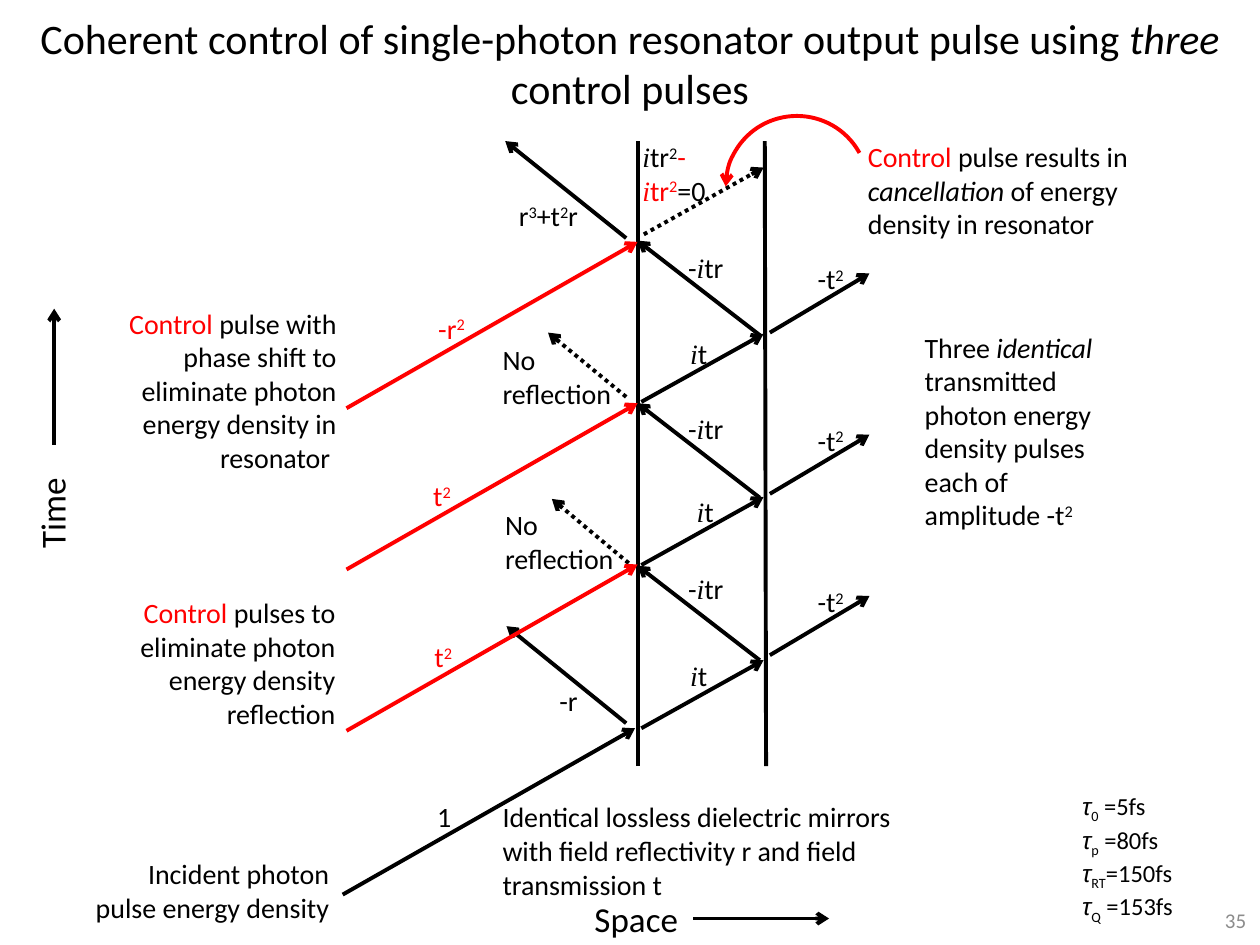
from lxml.etree import SubElement
from pptx import Presentation
from pptx.dml.color import RGBColor
from pptx.enum.dml import MSO_LINE
from pptx.enum.shapes import MSO_CONNECTOR, MSO_SHAPE
from pptx.enum.text import MSO_ANCHOR, MSO_AUTO_SIZE, PP_ALIGN
from pptx.oxml.ns import qn
from pptx.util import Inches, Pt

BLACK, RED, GRAY = "000000", "FF0000", "8C8C8C"
ALIGN = {"l": PP_ALIGN.LEFT, "c": PP_ALIGN.CENTER, "r": PP_ALIGN.RIGHT}

# Run styles: R red, I italic, M italic Times, G italic Arial, ^ superscript, _ subscript
IT = [("i", "M"), ("t", "")]
MINUS_ITR = [("-", ""), ("i", "M"), ("tr", "")]
MINUS_T2 = [("-t", ""), ("2", "^")]
RED_T2 = [("t", "R"), ("2", "R^")]
RED_MINUS_R2 = [("-r", "R"), ("2", "R^")]

TRIPS = 3
# start x, start y, end x, end y, colour, rise per round trip
TRIP_RAYS = [
    (5.09, 5.78, 6.06, 5.24, BLACK, 1.295),
    (6.03, 5.24, 5.06, 4.49, BLACK, 1.29),
    (6.11, 5.2, 6.9, 4.73, BLACK, 1.28),
    (2.75, 5.8, 5.06, 4.48, RED, 1.28),
]
# left, top, width, runs, wrap, rise per round trip
TRIP_LABELS = [
    (5.23, 4.49, 0.61, MINUS_ITR, True, 1.275),
    (6.39, 4.59, 0.42, MINUS_T2, False, 1.28),
]
SINGLE_RAYS = [
    (2.72, 7.1, 5.04, 5.78, False),
    (4.97, 5.74, 4.02, 4.97, False),
    (4.99, 4.47, 4.38, 3.96, True),
    (4.97, 3.15, 4.35, 2.64, True),
    (4.97, 1.89, 4.01, 1.12, False),
    (5.11, 1.86, 6.06, 1.33, True),
]
MIRRORS = [(5.06, 6.08, 5.06, 1.12), (6.08, 6.08, 6.07, 1.12)]
AXES = [(5.5, 7.29, 6.58, 7.29), (0.43, 3.53, 0.43, 2.45)]

# left, top, width, height, alignment, runs
NOTES = [
    (0.62, 6.75, 2.09, 0.64, "r", [("Incident photon pulse energy density", "")]),
    (7.24, 2.57, 1.81, 1.72, "l", [
        ("Three ", ""), ("identical", "I"),
        (" transmitted photon energy density pulses each of amplitude -t", ""), ("2", "^")]),
    (3.89, 6.3, 3.42, 0.91, "l", [
        ("Identical lossless dielectric mirrors with field reflectivity r and field transmission t", "")]),
    (6.79, 1.06, 2.86, 0.91, "l", [
        ("Control ", "R"), ("pulse results in ", ""), ("cancellation", "I"),
        (" of energy density in resonator", "")]),
    (0.51, 2.38, 2.26, 1.45, "r", [
        ("Control", "R"),
        (" pulse with phase shift to eliminate photon energy density in resonator ", "")]),
    (0.42, 4.68, 2.34, 1.17, "r", [
        ("Control", "R"), (" pulses to eliminate photon energy density reflection", "")]),
    (3.91, 3.98, 1.19, 0.64, "l", [("No reflection", "")]),
    (3.89, 2.67, 1.19, 0.64, "l", [("No reflection", "")]),
    (5, 1.06, 0.77, 0.64, "l", [
        ("i", "M"), ("tr", ""), ("2", "^"), ("-", "R"), ("i", "RM"), ("tr", "R"),
        ("2", "R^"), ("=0", "")]),
]
# left, top, width, runs
RAY_LABELS = [
    (3.37, 6.3, 0.32, [("1", "")]),
    (4.34, 5.38, 0.35, [("-r", "")]),
    (4.02, 1.53, 0.7, [("r", ""), ("3", "^"), ("+t", ""), ("2", "^"), ("r", "")]),
    (5.38, 5.18, 0.34, IT),
    (5.43, 3.88, 0.34, IT),
    (5.38, 2.62, 0.34, IT),
    (3.35, 5.03, 0.36, RED_T2),
    (3.34, 3.75, 0.36, RED_T2),
    (3.38, 2.42, 0.43, RED_MINUS_R2),
]
TITLE = [("Coherent control of single-photon resonator output pulse using ", ""),
         ("three", "I"), (" control pulses", "")]
TIMES = [("0", " =5fs"), ("p", " =80fs"), ("RT", "=150fs"), ("Q", " =153fs")]


def color(value):
    return RGBColor.from_string(value)


def add_text(slide, box, paragraphs, size=16, align="l", wrap=True, fit=True,
             middle=False, ink=BLACK):
    shape = slide.shapes.add_textbox(*map(Inches, box))
    frame = shape.text_frame
    frame.word_wrap = wrap
    frame.auto_size = MSO_AUTO_SIZE.SHAPE_TO_FIT_TEXT if fit else MSO_AUTO_SIZE.NONE
    frame.vertical_anchor = MSO_ANCHOR.MIDDLE if middle else MSO_ANCHOR.TOP
    for index, runs in enumerate(paragraphs):
        paragraph = frame.add_paragraph() if index else frame.paragraphs[0]
        paragraph.alignment = ALIGN[align]
        for text, style in runs:
            run = paragraph.add_run()
            run.text = text
            font = run.font
            font.size = Pt(size)
            font.name = ("Times New Roman" if "M" in style
                         else "Arial" if "G" in style else "Calibri")
            font.italic = any(mark in style for mark in "IMG")
            font.color.rgb = color(RED if "R" in style else ink)
            if "^" in style:
                font._element.set("baseline", "30000")
            elif "_" in style:
                font._element.set("baseline", "-25000")
    return shape


def style_line(shape, ink, arrow=True, dotted=False):
    shape.line.color.rgb = color(ink)
    shape.line.width = Pt(2.25)
    if dotted:
        shape.line.dash_style = MSO_LINE.ROUND_DOT
    if arrow:
        outline = shape.element.spPr.find(qn("a:ln"))
        SubElement(outline, qn("a:tailEnd"), type="arrow")


def add_line(slide, ends, ink=BLACK, arrow=True, dotted=False):
    line = slide.shapes.add_connector(MSO_CONNECTOR.STRAIGHT, *map(Inches, ends))
    style_line(line, ink, arrow, dotted)
    SubElement(line.element.spPr, qn("a:effectLst"))


def add_control_arc(slide):
    arc = slide.shapes.add_shape(MSO_SHAPE.ARC, *map(Inches, (5.76, 0.92, 1.13, 1.12)))
    arc.adjustments[0] = 124.91
    arc.adjustments[1] = 0
    arc.element.spPr.find(qn("a:xfrm")).set("flipH", "1")
    arc.fill.background()
    arc.shadow.inherit = False
    style_line(arc, RED)


def main():
    presentation = Presentation()
    presentation.slide_width, presentation.slide_height = Inches(10), Inches(7.5)
    slide = presentation.slides.add_slide(presentation.slide_layouts[6])

    add_text(slide, (0, 0, 10, 0.99), [TITLE], 24, "c", fit=False, middle=True)
    add_text(slide, (4.62, 7.07, 0.87, 0.44), [[("Space", "")]], 20, wrap=False)
    time_label = add_text(slide, (0.03, 3.85, 0.77, 0.44), [[("Time", "")]], 20, wrap=False)
    time_label.rotation = 270

    for ends in AXES:
        add_line(slide, ends)
    for ends in MIRRORS:
        add_line(slide, ends, arrow=False)
    for *ends, dotted in SINGLE_RAYS:
        add_line(slide, ends, dotted=dotted)
    for trip in range(TRIPS):
        for x1, y1, x2, y2, ink, rise in TRIP_RAYS:
            add_line(slide, (x1, y1 - trip * rise, x2, y2 - trip * rise), ink)
        for left, top, width, runs, wrap, rise in TRIP_LABELS:
            add_text(slide, (left, top - trip * rise, width, 0.37), [runs],
                     align="r" if wrap else "l", wrap=wrap)
    add_control_arc(slide)

    for *box, align, runs in NOTES:
        add_text(slide, box, [runs], align=align)
    for left, top, width, runs in RAY_LABELS:
        add_text(slide, (left, top, width, 0.37), [runs], wrap=False)
    constants = [[("τ", "G"), (name, "_"), (value, "")] for name, value in TIMES]
    add_text(slide, (8.49, 6.23, 1.51, 1.28), constants, 14)
    add_text(slide, (7.66, 7.1, 2.33, 0.4), [[("35", "")]], 12, "r",
             fit=False, middle=True, ink=GRAY)

    presentation.save("out.pptx")


if __name__ == "__main__":
    main()
